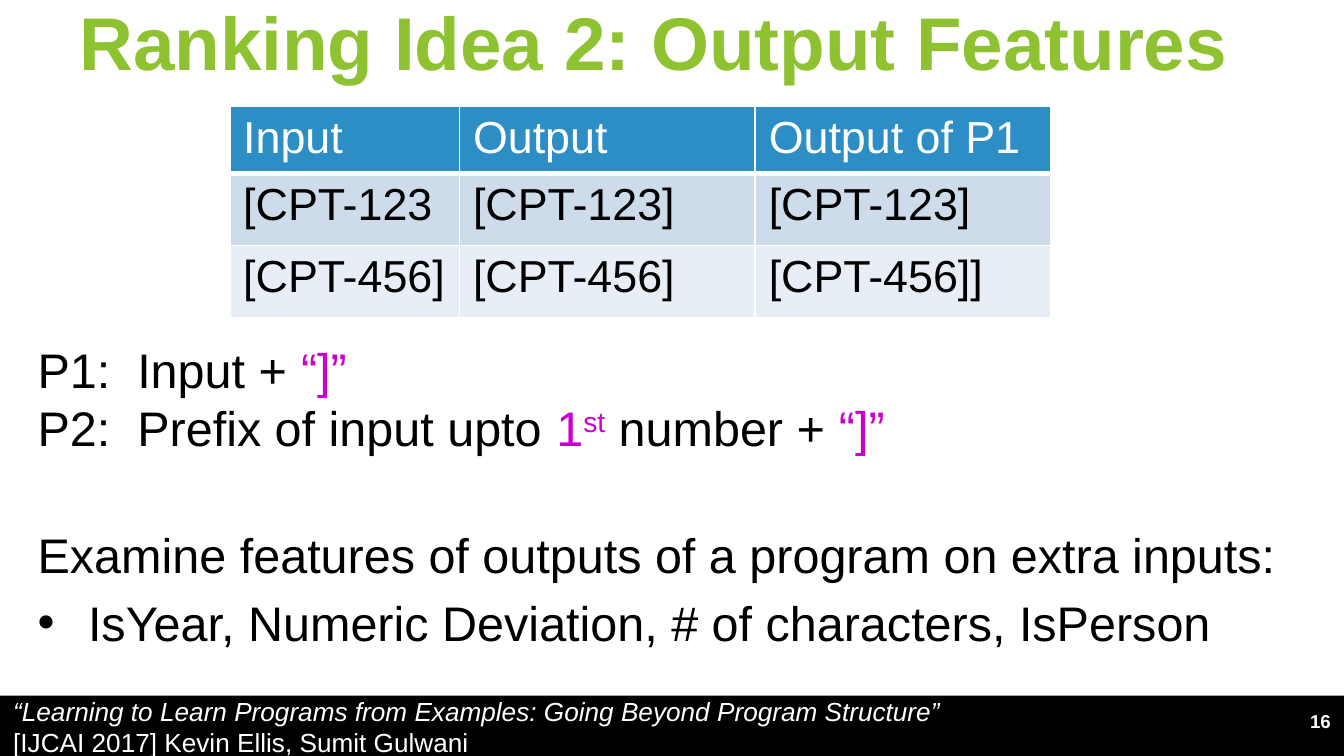
import pptx
import pptx.util
import pptx.oxml
import pptx.oxml.ns
import pptx.dml.color
import pptx.enum.text
import pptx.enum.shapes
from lxml import etree

HUES = {"green": "8FC230", "pink": "CC00CC", "black": "000000", "white": "FFFFFF",
        "head": "2D8EC5", "odd": "CDDBEA", "even": "E8EEF5"}
WIDE = pptx.util.Inches(10)
HIGH = WIDE * 9 // 16
COL, ROW = WIDE / 100, HIGH / 100
ALIGN = pptx.enum.text.PP_ALIGN
ANCHOR = pptx.enum.text.MSO_ANCHOR


def box(left, top, wide, high):
    return [int(left * COL), int(top * ROW), int(wide * COL), int(high * ROW)]


def hue(name):
    return pptx.dml.color.RGBColor.from_string(HUES[name])


def write(par, text, size=26, color="black", bold=False, italic=False, lift=0):
    run = par.add_run()
    run.text = text
    font = run.font
    font.name, font.size = "Arial", pptx.util.Pt(size)
    font.bold, font.italic = bold, italic
    font.color.rgb = hue(color)
    if lift:
        run._r.get_or_add_rPr().set("baseline", str(lift * 1000))


def place(shape, area):
    shape.left, shape.top, shape.width, shape.height = area


def bullet(par, mark=None, indent=0):
    props = par._p.get_or_add_pPr()
    props.set("marL", str(indent))
    props.set("indent", str(-indent))
    kind = "a:buChar" if mark else "a:buNone"
    item = etree.SubElement(props, pptx.oxml.ns.qn(kind))
    if mark:
        item.set("char", mark)


def title(slide, area):
    shape = slide.shapes.title
    place(shape, area)
    frame = shape.text_frame
    frame.auto_size = pptx.enum.text.MSO_AUTO_SIZE.NONE
    frame.vertical_anchor = ANCHOR.MIDDLE
    par = frame.paragraphs[0]
    par.alignment = ALIGN.LEFT
    write(par, "Ranking Idea 2: Output Features", size=40, color="green", bold=True)


def body(slide, area):
    shape = slide.placeholders[1]
    place(shape, area)
    frame = shape.text_frame
    frame.auto_size = pptx.enum.text.MSO_AUTO_SIZE.NONE
    pink = {"color": "pink"}
    lines = [
        (0, None, [("P1:  Input + ", {}), ("“]”", pink)]),
        (0, None, [("P2:  Prefix of input upto ", {}), ("1", pink),
                   ("st", {"color": "pink", "lift": 30}),
                   (" number + ", {}), ("“]”", pink)]),
        (37, None, [("Examine features of outputs of a program on extra inputs:", {})]),
        (5, "•", [("IsYear, Numeric Deviation, # of characters, IsPerson", {})]),
    ]
    for spot, (gap, mark, runs) in enumerate(lines):
        par = frame.add_paragraph() if spot else frame.paragraphs[0]
        par.space_before = pptx.util.Pt(gap)
        bullet(par, mark, int(3.75 * COL) if mark else 0)
        for text, style in runs:
            write(par, text, **style)


def edge(cell, head):
    props = cell._tc.get_or_add_tcPr()
    for spot, side in enumerate("LRTB"):
        thick = 3 if side == "B" and head else 1
        line = etree.Element(pptx.oxml.ns.qn("a:ln" + side), w=str(pptx.util.Pt(thick)))
        fill = etree.SubElement(line, pptx.oxml.ns.qn("a:solidFill"))
        etree.SubElement(fill, pptx.oxml.ns.qn("a:srgbClr"), val=HUES["white"])
        props.insert(spot, line)


def grid(slide, area, cols, rows):
    table = slide.shapes.add_table(len(rows), len(cols), *area).table
    for col, wide in zip(table.columns, cols):
        col.width = int(wide * COL)
    for row, high in zip(table.rows, (8.89, 9.6, 9.6)):
        row.height = int(high * ROW)
    for down, (fill, texts) in enumerate(zip(("head", "odd", "even"), rows)):
        for across, text in enumerate(texts):
            cell = table.cell(down, across)
            cell.fill.solid()
            cell.fill.fore_color.rgb = hue(fill)
            edge(cell, down == 0)
            write(cell.text_frame.paragraphs[0], text, size=24,
                  color="black" if down else "white")


def band(slide, area):
    left, top, wide, high = area
    bar = slide.shapes.add_shape(pptx.enum.shapes.MSO_SHAPE.RECTANGLE, *area)
    bar.shadow.inherit = False
    bar.fill.solid()
    bar.fill.fore_color.rgb = hue("black")
    bar.line.fill.background()

    note = slide.shapes.add_textbox(left, top - int(0.9 * ROW), int(wide * 0.8), int(high * 1.1))
    frame = note.text_frame
    frame.word_wrap = True
    write(frame.paragraphs[0],
          "“Learning to Learn Programs from Examples: Going Beyond Program Structure”",
          size=14, color="white", italic=True)
    write(frame.add_paragraph(), "[IJCAI 2017] Kevin Ellis, Sumit Gulwani",
          size=14, color="white")

    page = slide.shapes.add_textbox(left + int(wide * 0.96), top + int(1.06 * ROW),
                                    int(wide * 0.04), int(high * 0.78))
    page.text_frame.word_wrap = True
    par = page.text_frame.paragraphs[0]
    par.alignment = ALIGN.RIGHT
    write(par, "16", size=10, color="white", bold=True)


def main():
    deck = pptx.Presentation()
    deck.slide_width, deck.slide_height = WIDE, HIGH
    slide = deck.slides.add_slide(deck.slide_layouts[1])
    band(slide, box(0, 92, 100, 8))
    title(slide, box(4.9, -3.02, 95, 16.71))
    body(slide, box(1.8, 44.09, 95.9, 47.29))
    grid(slide, box(17.1, 14, 39.1, 28.09), (17.1, 22),
         [("Input", "Output"), ("[CPT-123", "[CPT-123]"), ("[CPT-456]", "[CPT-456]")])
    grid(slide, box(56.2, 14, 22, 28.09), (22,),
         [("Output of P1",), ("[CPT-123]",), ("[CPT-456]]",)])
    deck.save("out.pptx")


if __name__ == "__main__":
    main()
